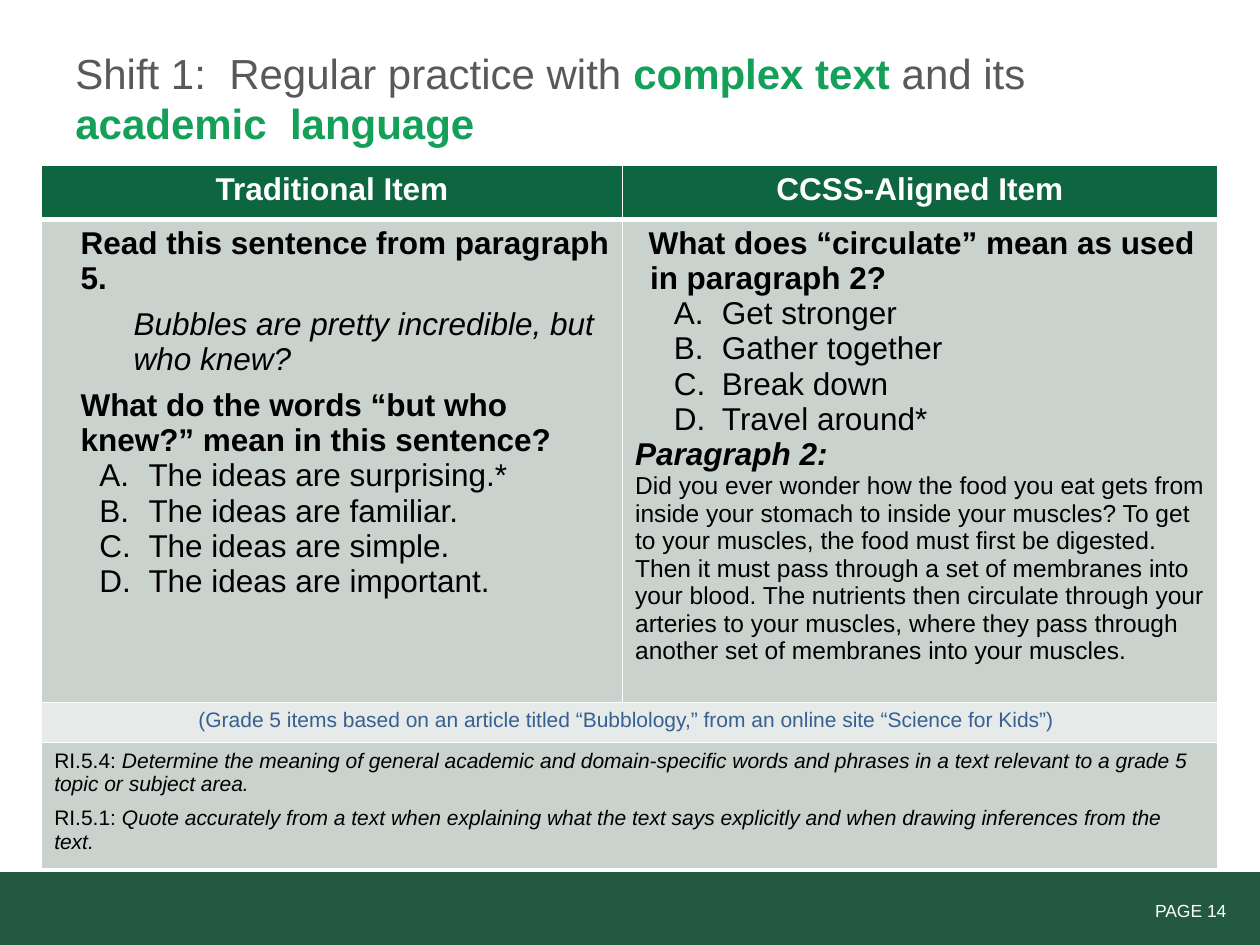
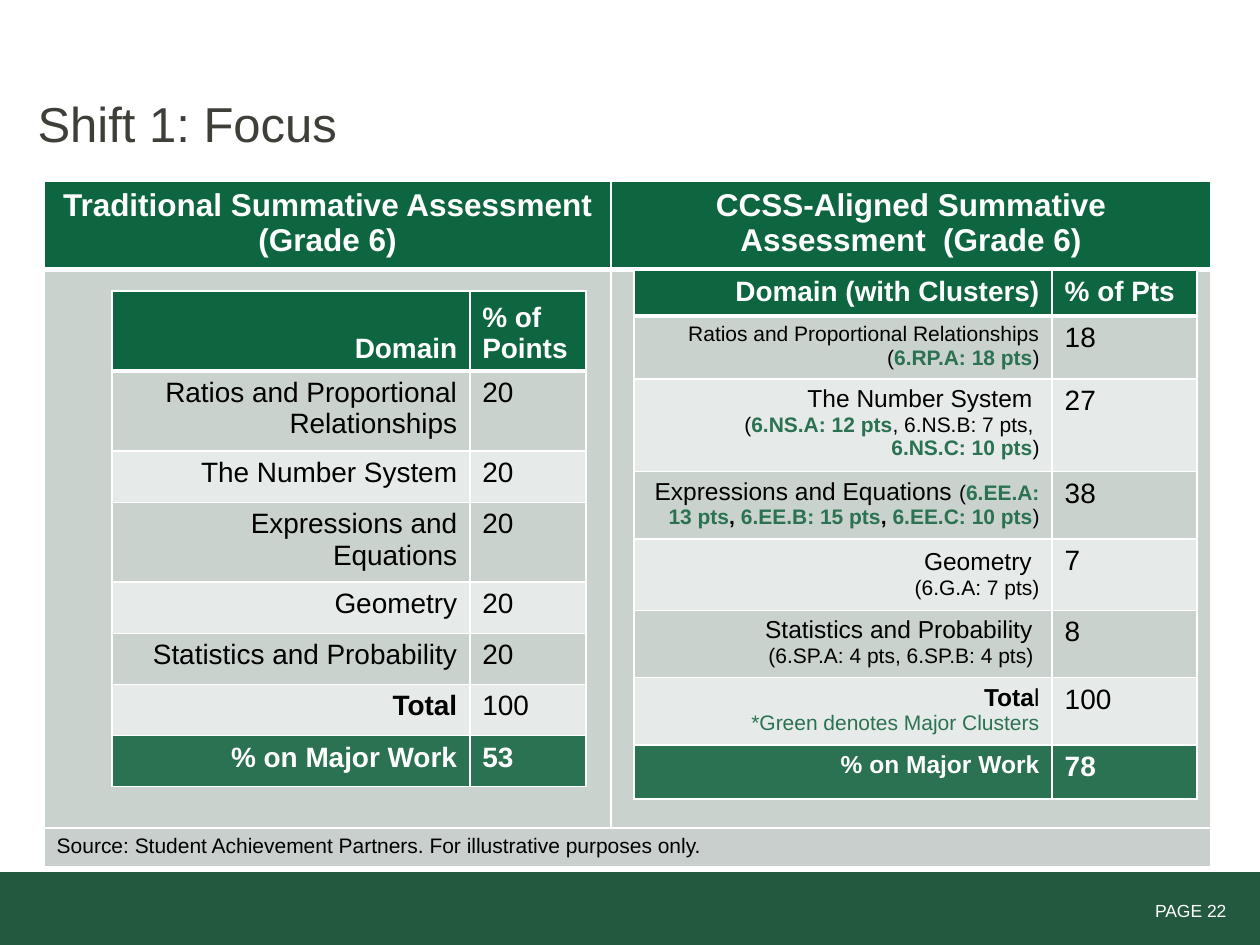
from pptx import Presentation
from pptx.dml.color import RGBColor
from pptx.enum.shapes import MSO_SHAPE as Shape
from pptx.enum.text import MSO_ANCHOR as Anchor, PP_ALIGN as Align
from pptx.oxml.ns import qn
from pptx.util import Cm, Pt
from lxml.etree import SubElement

# Shared look
FONT = "Arial"
WHITE, BLACK, GREY, DARK = "FFFFFF", "000000", "595959", "3F3F39"
BAND, HEAD, DEEP, LIME = "23593E", "0E6641", "2A7251", "15A059"
TINT, PALE, ASH, BLUE = "CAD2CD", "E6EAE8", "C9CFCC", "366092"
MAJOR = {"color": DEEP, "bold": True}
TITLE = {"color": WHITE, "bold": True}
SMALL = {"size": 12}
BOLD, SLOPE = {"bold": True}, {"italic": True}


def paint(target, color):
    target.solid()
    target.fore_color.rgb = RGBColor.from_string(color)


# Text: a line holds bits, each a string or a (string, font changes) pair
def line(*bits, align=None, before=0, left=0, first=0, letter=False,
         space=None, **font):
    pairs = [(bit, {}) if isinstance(bit, str) else bit for bit in bits]
    return {"bits": [(text, {**font, **more}) for text, more in pairs],
            "align": align, "before": before, "left": left, "first": first,
            "letter": letter, "space": space}


def style(run, size=18, color=BLACK, bold=False, italic=False):
    font = run.font
    font.name, font.size = FONT, Pt(size)
    font.bold, font.italic = bold, italic
    paint(font.fill, color)


def write(frame, lines):
    for i, item in enumerate(lines):
        par = frame.add_paragraph() if i else frame.paragraphs[0]
        par.text = item["bits"][0][0]
        for text, _ in item["bits"][1:]:
            par.add_run().text = text
        par.alignment = item["align"]
        if item["before"]:
            par.space_before = Pt(item["before"])
        if item["space"]:
            par.line_spacing = item["space"]
        props = par._p.get_or_add_pPr()
        props.set("marL", str(Cm(item["left"])))
        props.set("indent", str(Cm(item["first"])))
        if item["letter"]:
            SubElement(props, qn("a:buFont"), typeface="+mj-lt")
            SubElement(props, qn("a:buAutoNum"), type="alphaUcPeriod")
        for run, (_, font) in zip(par.runs, item["bits"]):
            style(run, **font)


def add_text(slide, x, y, w, h, *lines, anchor=Anchor.TOP):
    frame = slide.shapes.add_textbox(Cm(x), Cm(y), Cm(w), Cm(h)).text_frame
    frame.word_wrap = True
    frame.vertical_anchor = anchor
    write(frame, lines)


# Tables
def edge(cell, sides):
    props = cell._tc.get_or_add_tcPr()
    for spot, (side, width) in enumerate(sides.items()):
        rule = SubElement(props, qn(f"a:ln{side}"), w=str(Pt(width)))
        fill = SubElement(rule, qn("a:solidFill"))
        SubElement(fill, qn("a:srgbClr"), val=WHITE)
        props.insert(spot, rule)


def add_grid(slide, x, y, widths, heights, fills, rows, anchor=Anchor.TOP):
    """Draw a table; a row with a single cell spans the full width."""
    frame = slide.shapes.add_table(len(rows), len(widths), Cm(x), Cm(y),
                                   Cm(sum(widths)), Cm(sum(heights)))
    grid = frame.table
    grid.first_row = grid.horz_banding = False
    for col, width in zip(grid.columns, widths):
        col.width = Cm(width)
    for r, (row, height, fill) in enumerate(zip(rows, heights, fills)):
        grid.rows[r].height = Cm(height)
        if len(row) < len(widths):
            grid.cell(r, 0).merge(grid.cell(r, len(widths) - 1))
        for c in range(len(widths)):
            cell = grid.cell(r, c)
            paint(cell.fill, fill)
            edge(cell, {"L": 1, "R": 1, "T": 3 if r == 1 else 1,
                        "B": 1 if r else 3})
            if r == 0:
                cell.vertical_anchor = anchor
            if c < len(row):
                write(cell.text_frame, row[c])


def heads(*texts, **more):
    return [[line(text, align=Align.CENTER, **TITLE, **more)]
            for text in texts]


def picks(texts, left, first):
    return [line(text, left=left, first=first, letter=True) for text in texts]


def right(*bits, **font):
    return line(*bits, align=Align.RIGHT, **font)


# Slide frame
def add_slide(deck, page):
    slide = deck.slides.add_slide(deck.slide_layouts[6])
    band = slide.shapes.add_shape(Shape.RECTANGLE, 0, Cm(17.58),
                                  deck.slide_width, Cm(1.47))
    band.shadow.inherit = False
    paint(band.fill, BAND)
    band.line.fill.background()
    add_text(slide, 21.03, 18.01, 4.04, 0.69,
             right(f"PAGE {page} ", size=10, color=WHITE))
    return slide


# Slide on complex text
def add_items(deck):
    slide = add_slide(deck, 14)
    lime = {"color": LIME, "bold": True}
    add_text(slide, 1.27, 0.38, 22.86, 3.18,
             line("Shift 1:  Regular practice with ", ("complex text", lime),
                  " and its ", ("academic  language", lime),
                  size=24, color=GREY),
             anchor=Anchor.MIDDLE)
    old = [
        line("Read this sentence from paragraph 5.", left=0.53, bold=True),
        line("Bubbles are pretty incredible, but who knew?",
             left=1.6, before=6, italic=True),
        line("What do the words “but who knew?” mean in this sentence?",
             left=0.53, before=6, bold=True),
        *picks(["The ideas are surprising.*", "The ideas are familiar.",
                "The ideas are simple.", "The ideas are important."],
               1.9, -0.99),
    ]
    new = [
        line("What does “circulate” mean as used in paragraph 2?",
             left=0.3, first=-0.03, bold=True),
        *picks(["Get stronger", "Gather together", "Break down",
                "Travel around*"], 1.75, -0.97),
        line("Paragraph 2:", bold=True, italic=True),
        line("Did you ever wonder how the food you eat gets from inside your "
             "stomach to inside your muscles? To get to your muscles, the "
             "food must first be digested. Then it must pass through a set "
             "of membranes into your blood. The nutrients then circulate "
             "through your arteries to your muscles, where they pass through "
             "another set of membranes into your muscles.", size=14),
    ]
    note = line("(Grade 5 items based on an article titled “Bubblology,” from "
                "an online site “Science for Kids”) ",
                align=Align.CENTER, size=12, color=BLUE)
    goals = [
        line("RI.5.4: ", ("Determine the meaning of general academic and "
             "domain-specific words and phrases in a text relevant to a "
             "grade 5 topic or subject area.", SLOPE), size=12),
        line("RI.5.1: ", ("Quote accurately from a text when explaining what "
             "the text says explicitly and when drawing inferences from the "
             "text.", SLOPE), size=12, before=6),
    ]
    add_grid(slide, 0.84, 3.33, [11.71, 11.99], [1.09, 9.73, 0.81, 2.54],
             [HEAD, TINT, PALE, TINT],
             [heads("Traditional Item", "CCSS-Aligned Item", space=0.82),
              [old, new], [[note]], [goals]], anchor=Anchor.MIDDLE)


# Slide on focus
def add_focus(deck):
    slide = add_slide(deck, 22)
    add_text(slide, 0.51, 0.89, 24.21, 3.18,
             line("Shift 1: Focus", size=28, color=DARK),
             anchor=Anchor.MIDDLE)
    add_grid(slide, 0.89, 3.66, [11.43, 12.09], [1.75, 11.25, 0.79],
             [HEAD, TINT, ASH],
             [heads("Traditional Summative Assessment (Grade 6)",
                    "CCSS-Aligned Summative Assessment  (Grade 6)"),
              [[], []],
              [[line("Source: Student Achievement Partners. For illustrative "
                     "purposes only.", size=12)]]])
    fills = [HEAD] + [TINT, PALE] * 3 + [DEEP]

    # Points by domain, traditional
    marks = [("Domain", "% of Points", TITLE),
             ("Ratios and Proportional Relationships", "20", {}),
             ("The Number System", "20", {}),
             ("Expressions and Equations", "20", {}),
             ("Geometry", "20", {}),
             ("Statistics and Probability", "20", {}),
             ("Total", "100", {}),
             ("% on Major Work", "53", TITLE)]
    rows = [[[right((name, BOLD if name == "Total" else {}),
                    size=16, **font)],
             [line(mark, size=16, **font)]] for name, mark, font in marks]
    add_grid(slide, 2.26, 5.87, [7.21, 2.34],
             [1.5, 1.5, 1.04, 1.5] + [1.03] * 4, fills, rows,
             anchor=Anchor.BOTTOM)

    # Points by domain and cluster, aligned
    parts = [
        ([right("Domain (with Clusters)", size=16, **TITLE)], "% of Pts"),
        ([right("Ratios and Proportional Relationships", size=12),
          right("(", ("6.RP.A: 18 pts", MAJOR), ")", size=12)], "18"),
        ([right("The Number System ", size=14),
          right("(", ("6.NS.A: 12 pts", MAJOR), ", 6.NS.B: 7 pts, ", size=12),
          right(("6.NS.C: 10 pts", MAJOR), ")", size=12)], "27"),
        ([right(("Expressions and Equations ", {"size": 14}), "(",
                ("6.EE.A: 13 pts", MAJOR), (", ", BOLD),
                ("6.EE.B: 15 pts", MAJOR), (", ", BOLD),
                ("6.EE.C: 10 pts", MAJOR), ")", size=12)], "38"),
        ([right("Geometry", (" ", {"size": 16}), size=14),
          right("(6.G.A: 7 pts)", size=12)], "7"),
        ([right("Statistics and Probability ", size=14),
          right("(6.SP.A: 4 pts, 6.SP.B: 4 pts) ", size=12)], "8"),
        ([right(("Tota", BOLD), "l", size=14),
          right("*Green denotes Major Clusters", color=DEEP, **SMALL)],
         "100"),
        ([right("% on Major Work", size=14, **TITLE)], "78"),
    ]
    rows = [[names, [line(mark, size=16,
                          **(TITLE if fill in (HEAD, DEEP) else {}))]]
            for (names, mark), fill in zip(parts, fills)]
    add_grid(slide, 12.78, 5.44, [8.43, 2.92],
             [0.89, 1.24, 1.83, 1.35, 1.42, 1.35, 1.35, 1.09], fills, rows)


def main():
    deck = Presentation()
    deck.slide_width, deck.slide_height = Cm(25.4), Cm(19.05)
    add_items(deck)
    add_focus(deck)
    deck.save("out.pptx")


if __name__ == "__main__":
    main()
